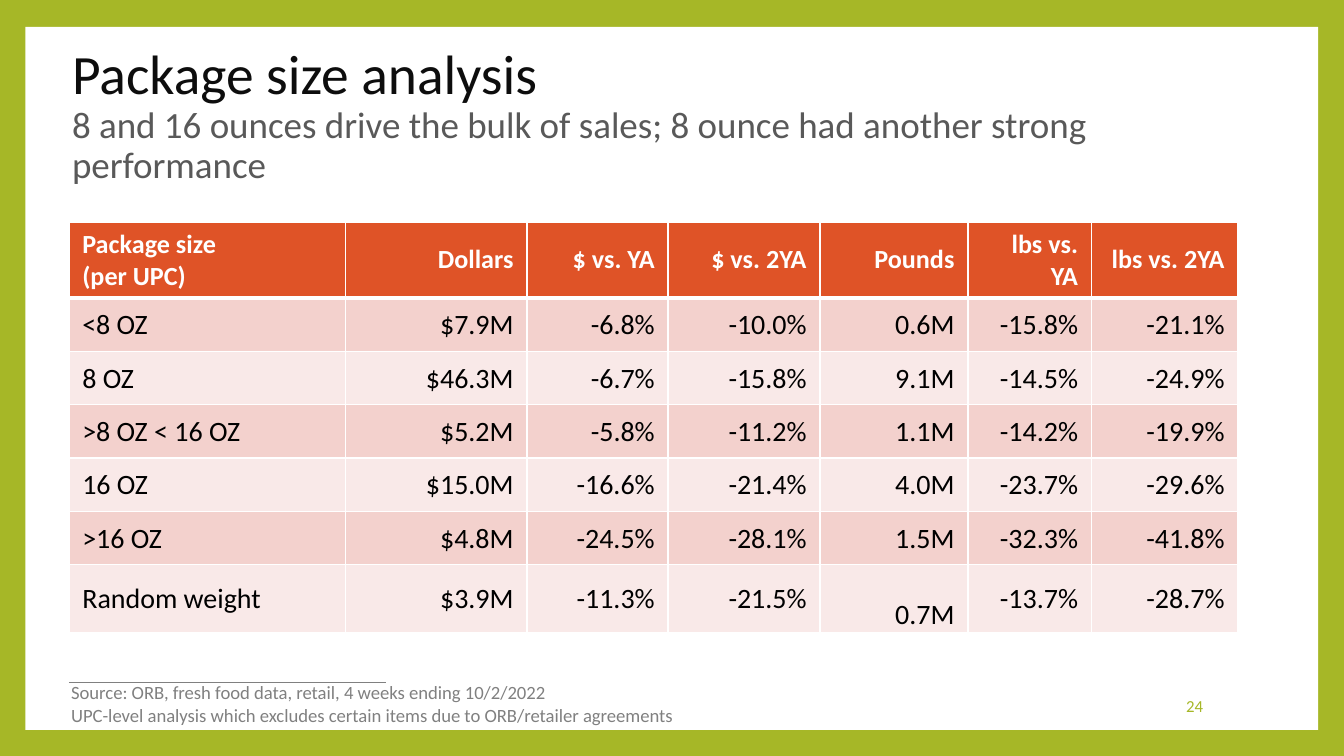
"""Build the package size analysis slide."""
from lxml import etree
from pptx import Presentation
from pptx.dml.color import RGBColor
from pptx.enum.shapes import MSO_CONNECTOR, MSO_SHAPE
from pptx.enum.text import MSO_ANCHOR, PP_ALIGN
from pptx.oxml.ns import qn
from pptx.util import Pt

LEFT, RIGHT = PP_ALIGN.LEFT, PP_ALIGN.RIGHT
TOP, MID = MSO_ANCHOR.TOP, MSO_ANCHOR.MIDDLE
FONT = "Calibri"
GREEN, ORANGE, WHITE, GRAY = "A6B727", "DF5327", "FFFFFF", "808080"
BANDS = ["F9E9E8", "F3D1CD"]

TITLE = [
    ("Package size analysis", 29.7, "0D0D0D"),
    ("8 and 16 ounces drive the bulk of sales; 8 ounce had another strong performance",
     19.8, "595959"),
]
NOTES = [
    "Source: ORB, fresh food data, retail, 4 weeks ending 10/2/2022",
    "UPC-level analysis which excludes certain items due to ORB/retailer agreements",
]
PAGE = "24"
ROWS = [
    ["Package size\n(per UPC)", "Dollars", "$ vs. YA", "$ vs. 2YA", "Pounds",
     "lbs vs. YA", "lbs vs. 2YA"],
    ["<8 OZ", "$7.9M", "-6.8%", "-10.0%", "0.6M", "-15.8%", "-21.1%"],
    ["8 OZ", "$46.3M", "-6.7%", "-15.8%", "9.1M", "-14.5%", "-24.9%"],
    [">8 OZ < 16 OZ", "$5.2M", "-5.8%", "-11.2%", "1.1M", "-14.2%", "-19.9%"],
    ["16 OZ", "$15.0M", "-16.6%", "-21.4%", "4.0M", "-23.7%", "-29.6%"],
    [">16 OZ", "$4.8M", "-24.5%", "-28.1%", "1.5M", "-32.3%", "-41.8%"],
    ["Random weight", "$3.9M", "-11.3%", "-21.5%", "0.7M", "-13.7%", "-28.7%"],
]
WIDTHS = [148.3, 97.2, 75.6, 81.4, 79.2, 66.2, 78.5]
HEIGHTS = [40.2] + [28.6] * 5 + [36.4]
LOW_CELL = (6, 4)


def color(code):
    return RGBColor.from_string(code)


def paint(fill, code):
    fill.solid()
    fill.fore_color.rgb = color(code)


def add_run(para, text, size, code, bold=False):
    run = para.add_run()
    run.text = text
    font = run.font
    font.name, font.size, font.bold = FONT, Pt(size), bold
    font.color.rgb = color(code)


def add_lines(para, lines):
    for i, line in enumerate(lines):
        if i:
            para.add_line_break()
        add_run(para, *line)


def add_box(slide, x, y, w, h, anchor, wrap=True):
    frame = slide.shapes.add_textbox(Pt(x), Pt(y), Pt(w), Pt(h)).text_frame
    frame.word_wrap, frame.vertical_anchor = wrap, anchor
    return frame


def add_edges(cell, top, bottom):
    props = cell._tc.get_or_add_tcPr()
    for i, (side, width) in enumerate([("L", 1), ("R", 1), ("T", top), ("B", bottom)]):
        line = etree.Element(qn(f"a:ln{side}"), w=str(Pt(width)))
        fill = etree.SubElement(line, qn("a:solidFill"))
        etree.SubElement(fill, qn("a:srgbClr"), val=WHITE)
        props.insert(i, line)


def fill_cell(cell, text, r, c):
    head = r == 0
    cell.vertical_anchor = MID
    if not head:
        cell.margin_top = Pt(18 if (r, c) == LOW_CELL else 0.7)
        cell.margin_bottom = 0
    paint(cell.fill, ORANGE if head else BANDS[r % 2])
    add_edges(cell, 3 if r == 1 else 1, 3 if head else 1)
    para = cell.text_frame.paragraphs[0]
    para.alignment = RIGHT if c else LEFT
    style = (14, WHITE, True) if head else (15, "000000")
    add_lines(para, [(part, *style) for part in text.split("\n")])


def add_grid(slide):
    table = slide.shapes.add_table(
        len(ROWS), len(WIDTHS), Pt(36.9), Pt(118.8),
        Pt(sum(WIDTHS)), Pt(sum(HEIGHTS))).table
    for col, width in zip(table.columns, WIDTHS):
        col.width = Pt(width)
    for r, (row, height) in enumerate(zip(ROWS, HEIGHTS)):
        table.rows[r].height = Pt(height)
        for c, text in enumerate(row):
            fill_cell(table.cell(r, c), text, r, c)


def main():
    deck = Presentation()
    deck.slide_width, deck.slide_height = Pt(720), Pt(405)
    slide = deck.slides.add_slide(deck.slide_layouts[6])
    paint(slide.background.fill, GREEN)

    panel = slide.shapes.add_shape(
        MSO_SHAPE.RECTANGLE, Pt(13.6), Pt(14.4), Pt(692.6), Pt(376.6))
    panel.shadow.inherit = False
    paint(panel.fill, WHITE)
    panel.line.fill.background()

    rule = slide.shapes.add_connector(
        MSO_CONNECTOR.STRAIGHT, Pt(36.9), Pt(365.6), Pt(206.6), Pt(365.6))
    rule.line.color.rgb = color(GRAY)
    rule.line.width = Pt(0.79)
    etree.SubElement(rule._element.spPr, qn("a:effectLst"))

    para = add_box(slide, 31.5, 24.5, 614, 76.3, MID).paragraphs[0]
    para.line_spacing = 0.9
    add_lines(para, TITLE)

    para = add_box(slide, 550.8, 367.2, 100.8, 21.6, MID).paragraphs[0]
    para.alignment = RIGHT
    add_run(para, PAGE, 9, GREEN)

    frame = add_box(slide, 31, 361.4, 339, 31.7, TOP, False)
    for i, note in enumerate(NOTES):
        para = frame.add_paragraph() if i else frame.paragraphs[0]
        add_run(para, note, 10, GRAY)

    add_grid(slide)
    deck.save("out.pptx")


if __name__ == "__main__":
    main()
